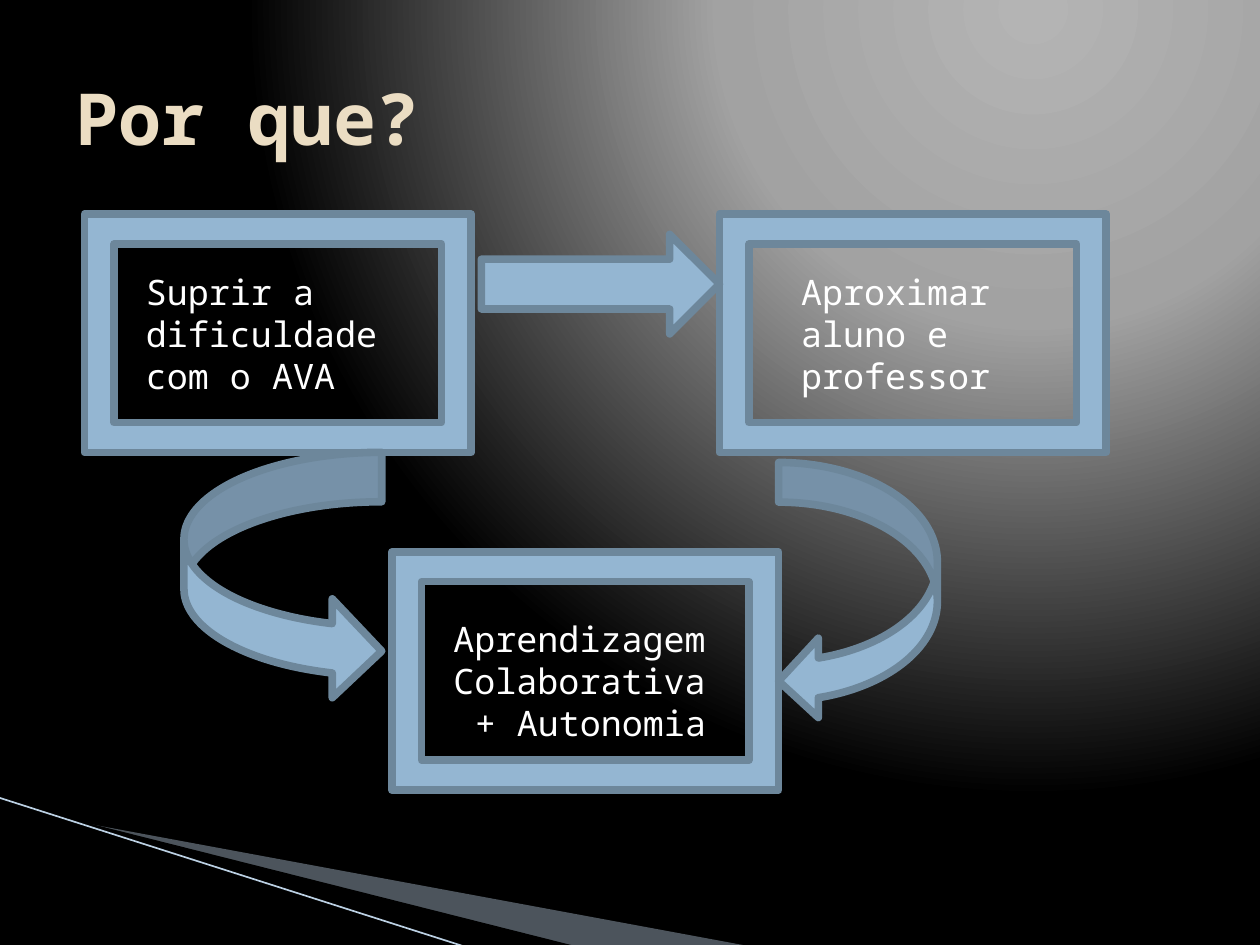
import lxml.etree
import pptx
import pptx.dml.color
import pptx.enum.dml
import pptx.enum.shapes
import pptx.enum.text
import pptx.oxml
import pptx.oxml.ns
import pptx.util

Inches = pptx.util.Inches
Pt = pptx.util.Pt
RGB = pptx.dml.color.RGBColor
SHAPE = pptx.enum.shapes.MSO_SHAPE
qn = pptx.oxml.ns.qn

BLUE = RGB(0x94, 0xB6, 0xD2)
EDGE = RGB(0x6D, 0x87, 0x9B)
PALE = RGB(0xC0, 0xD3, 0xE6)
THIN = RGB(0xBB, 0xD0, 0xE3)
SAND = RGB(0xEB, 0xDD, 0xC3)
WHITE = RGB(0xFF, 0xFF, 0xFF)
BLACK = RGB(0, 0, 0)
GLOW = [(0, RGB(0xB4, 0xB4, 0xB4)), (40, RGB(0xA2, 0xA2, 0xA2)), (100, BLACK)]
FONT = "Noto Sans Mono"


def style(font, size, color, bold=False):
    """Set the face, size and colour of a font."""
    font.name, font.size, font.bold = FONT, Pt(size), bold
    font.color.rgb = color


def paint_back(slide):
    """Fill the background with a round glow at the top right."""
    fill = slide.background.fill
    fill.solid()
    fill.fore_color.rgb = BLACK
    stops = "".join(
        f'<a:gs pos="{pos * 1000}"><a:srgbClr val="{color}"/></a:gs>'
        for pos, color in GLOW
    )
    grad = pptx.oxml.parse_xml(
        f'<a:gradFill {pptx.oxml.ns.nsdecls("a")} rotWithShape="1">'
        f"<a:gsLst>{stops}</a:gsLst>"
        '<a:path path="circle"><a:fillToRect l="65000" t="0" r="0" b="98000"/>'
        "</a:path></a:gradFill>"
    )
    solid = next(slide.background.element.iter(qn("a:solidFill")))
    solid.getparent().replace(solid, grad)


def add_blade(slide, points, color, alpha=None):
    """Draw a filled outline, see-through when alpha is given."""
    spots = [(Inches(x), Inches(y)) for x, y in points]
    pen = slide.shapes.build_freeform(*spots[0])
    pen.add_line_segments(spots[1:], close=True)
    blade = pen.convert_to_shape()
    blade.shadow.inherit = False
    blade.fill.solid()
    blade.fill.fore_color.rgb = color
    blade.line.fill.background()
    if alpha:
        tint = next(blade.fill.fore_color._xFill.iter(qn("a:srgbClr")))
        lxml.etree.SubElement(tint, qn("a:alpha"), val=str(alpha * 1000))


def add_sweep(slide, left, top):
    """Draw the blades and thin line of the lower left corner."""
    def place(points):
        return [(left + x, top + y) for x, y in points]

    add_blade(slide, place([(0.56, 0.18), (5.96, 1.18), (4.57, 1.18), (0.56, 0.17)]), PALE, 40)
    add_blade(slide, place([(0.54, 0.16), (4.58, 1.18), (3.73, 1.19), (0.55, 0.17)]), BLACK)
    line = slide.shapes.add_connector(
        pptx.enum.shapes.MSO_CONNECTOR.STRAIGHT,
        Inches(left), Inches(top), Inches(left + 3.72), Inches(top + 1.19),
    )
    line.line.color.rgb = THIN
    line.line.width = Pt(0.95)
    lxml.etree.SubElement(line._element.spPr, qn("a:effectLst"))


def set_title(slide, text, box):
    """Place and format the slide title."""
    title = slide.shapes.title
    title.left, title.top, title.width, title.height = map(Inches, box)
    frame = title.text_frame
    frame.text = text
    frame.vertical_anchor = pptx.enum.text.MSO_ANCHOR.MIDDLE
    line = frame.paragraphs[0]
    line.alignment = pptx.enum.text.PP_ALIGN.LEFT
    style(line.runs[0].font, 41, SAND, True)


def add_block(slide, kind, box):
    """Add a blue preset shape with a thick edge."""
    block = slide.shapes.add_shape(kind, *map(Inches, box))
    block.shadow.inherit = False
    block.fill.solid()
    block.fill.fore_color.rgb = BLUE
    block.line.color.rgb = EDGE
    block.line.width = Pt(4.33)


def add_card(slide, box, lines, inset, width):
    """Add a frame with its text inset from the top left corner."""
    add_block(slide, SHAPE.FRAME, box)
    left, top = box[0] + inset[0], box[1] + inset[1]
    label = slide.shapes.add_textbox(*map(Inches, (left, top, width, 1.11)))
    frame = label.text_frame
    frame.word_wrap = True
    frame.auto_size = pptx.enum.text.MSO_AUTO_SIZE.SHAPE_TO_FIT_TEXT
    frame.text = "\n".join(lines)
    for line in frame.paragraphs:
        style(line.runs[0].font, 20, WHITE)
        if line.text.startswith("+"):
            line._p.get_or_add_pPr().set("marL", str(Inches(0.17)))


def add_flow(slide, left, top):
    """Lay out the three cards and the arrows that join them."""
    size = (3.07, 1.89)
    cards = [
        (0, 0, ["Suprir a dificuldade com o AVA"], (0.39, 0.4), 2.2),
        (5.04, 0, ["Aproximar aluno e professor"], (0.55, 0.4), 1.97),
        (2.44, 2.68, ["Aprendizagem", "Colaborativa", "+ Autonomia"], (0.39, 0.47), 2.28),
    ]
    for x, y, lines, inset, width in cards:
        add_card(slide, (left + x, top + y, *size), lines, inset, width)
    arrows = [
        (SHAPE.CURVED_RIGHT_ARROW, 0.79, 1.89, 1.57, 1.97),
        (SHAPE.CURVED_LEFT_ARROW, 5.51, 1.97, 1.26, 2.05),
        (SHAPE.RIGHT_ARROW, 3.15, 0.16, 1.89, 0.79),
    ]
    for kind, x, y, width, height in arrows:
        add_block(slide, kind, (left + x, top + y, width, height))


def main():
    """Build the slide and save it."""
    deck = pptx.Presentation()
    deck.slide_width, deck.slide_height = Inches(10), Inches(7.5)
    slide = deck.slides.add_slide(deck.slide_layouts[5])
    paint_back(slide)
    add_sweep(slide, -0.01, 6.33)
    set_title(slide, "Por que?", (0.5, 0.3, 9, 1.25))
    add_flow(slide, 0.67, 1.7)
    deck.save("out.pptx")


if __name__ == "__main__":
    main()
